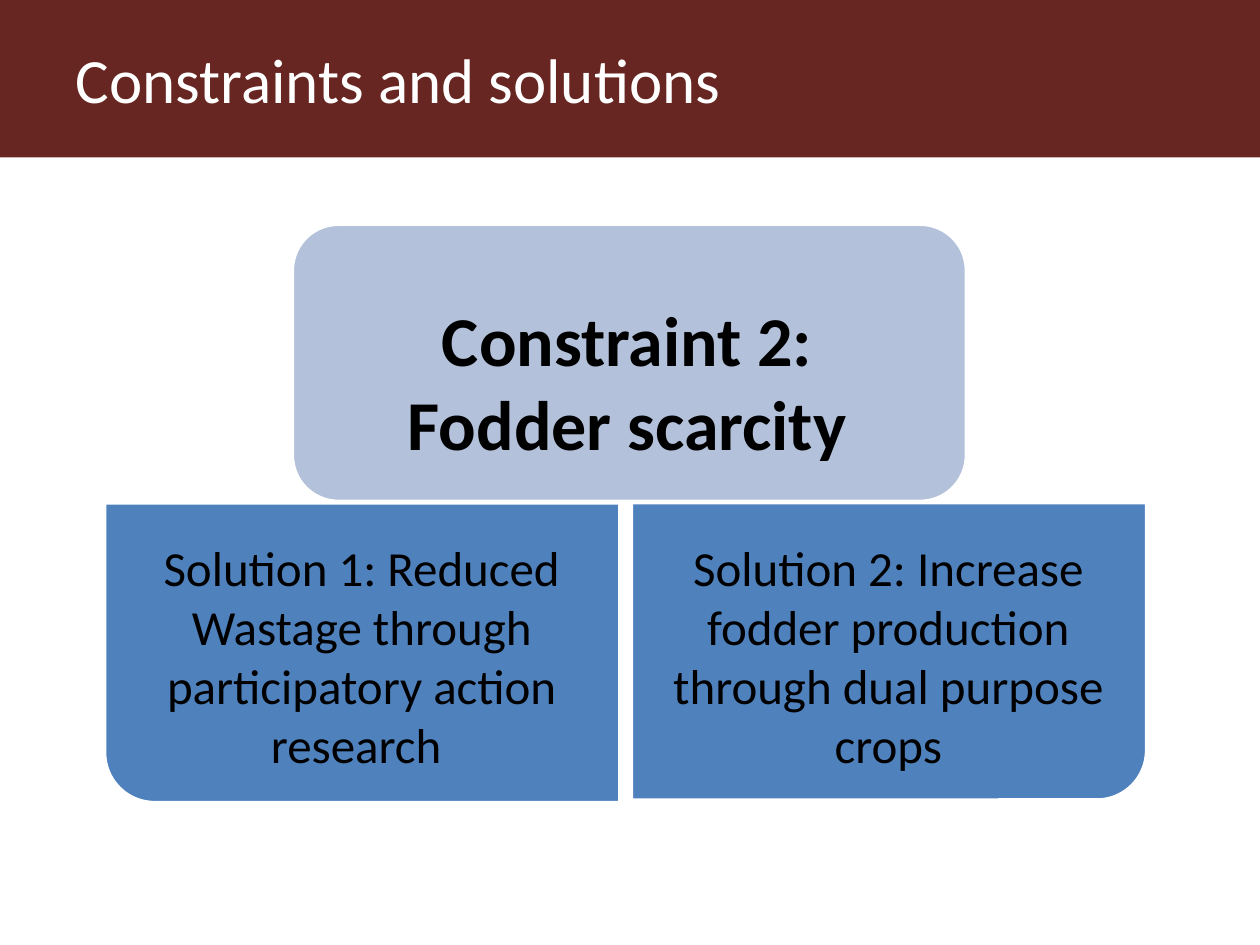
"""Build the slide on fodder scarcity and its two solutions."""
from pptx import Presentation
from pptx.dml.color import RGBColor
from pptx.enum import shapes, text
from pptx.util import Inches, Pt

MAROON = RGBColor(0x68, 0x26, 0x22)
BLUE = RGBColor(0x4F, 0x81, 0xBD)
PALE = RGBColor(0xB3, 0xC1, 0xDB)
WHITE = RGBColor(0xFF, 0xFF, 0xFF)
BLACK = RGBColor(0, 0, 0)
FONT = "Calibri"

TITLE = "Constraints and solutions"
CONSTRAINT = ["Constraint 2: ", "Fodder scarcity "]
SOLUTIONS = [
    # text, height, rotation, text left, text width
    ("Solution 1: Reduced Wastage through participatory action research ", 2.38, 180, 0.98, 3.78),
    ("Solution 2: Increase fodder production through dual purpose crops", 2.36, 90, 5.24, 3.62),
]

WIDTH, HEIGHT, BAND = 10, 7.5, 1.25
LEFT, TOP, COLUMN, GAP = 0.83, 3.99, 4.09, 0.09


def add_panel(page, kind, left, top, width, height, fill, outlined=True, rotation=0):
    """Add a filled shape covering the given area once rotated."""
    across, down = (height, width) if rotation == 90 else (width, height)
    panel = page.shapes.add_shape(
        kind,
        Inches(left + (width - across) / 2),
        Inches(top + (height - down) / 2),
        Inches(across),
        Inches(down),
    )
    panel.rotation = rotation
    panel.shadow.inherit = False
    panel.fill.solid()
    panel.fill.fore_color.rgb = fill
    if outlined:
        panel.line.color.rgb = WHITE
        panel.line.width = Pt(2)
    else:
        panel.line.fill.background()


def write(frame, lines, size, color, align, bold=False):
    """Fill a text frame with one paragraph per line."""
    frame.word_wrap = True
    for index, line in enumerate(lines):
        para = frame.add_paragraph() if index else frame.paragraphs[0]
        para.alignment = align
        span = para.add_run()
        span.text = line
        span.font.name = FONT
        span.font.size = Pt(size)
        span.font.bold = bold
        span.font.color.rgb = color


def add_label(page, left, top, width, height, lines, size, bold=False, inset=0.05):
    """Add a centred black text box."""
    box = page.shapes.add_textbox(Inches(left), Inches(top), Inches(width), Inches(height))
    box.text_frame.margin_top = Inches(inset)
    write(box.text_frame, lines, size, BLACK, text.PP_ALIGN.CENTER, bold)


def add_title(page):
    """Place the title over the band."""
    title = page.shapes.title
    title.left, title.top = Inches(0.5), 0
    title.width, title.height = Inches(WIDTH - 1), Inches(BAND)
    title.text_frame.vertical_anchor = text.MSO_ANCHOR.MIDDLE
    write(title.text_frame, [TITLE], 36, WHITE, text.PP_ALIGN.LEFT)
    title.element.getparent().append(title.element)


def main():
    """Build and save the deck."""
    deck = Presentation()
    deck.slide_width, deck.slide_height = Inches(WIDTH), Inches(HEIGHT)
    page = deck.slides.add_slide(deck.slide_layouts[5])
    kinds = shapes.MSO_SHAPE
    add_panel(page, kinds.RECTANGLE, 0, 0, WIDTH, BAND, MAROON, outlined=False)
    for column, (words, height, rotation, left, width) in enumerate(SOLUTIONS):
        start = LEFT + column * (COLUMN + GAP)
        add_panel(page, kinds.ROUND_1_RECTANGLE, start, TOP, COLUMN, height, BLUE, rotation=rotation)
        add_label(page, left, 4.22, width, 1.99, [words], 28)
    add_panel(page, kinds.ROUNDED_RECTANGLE, 2.32, 1.78, 5.35, 2.2, PALE)
    add_label(page, 2.56, 1.62, 4.96, 2.59, CONSTRAINT, 40, bold=True, inset=0.73)
    add_title(page)
    deck.save("out.pptx")


if __name__ == "__main__":
    main()
